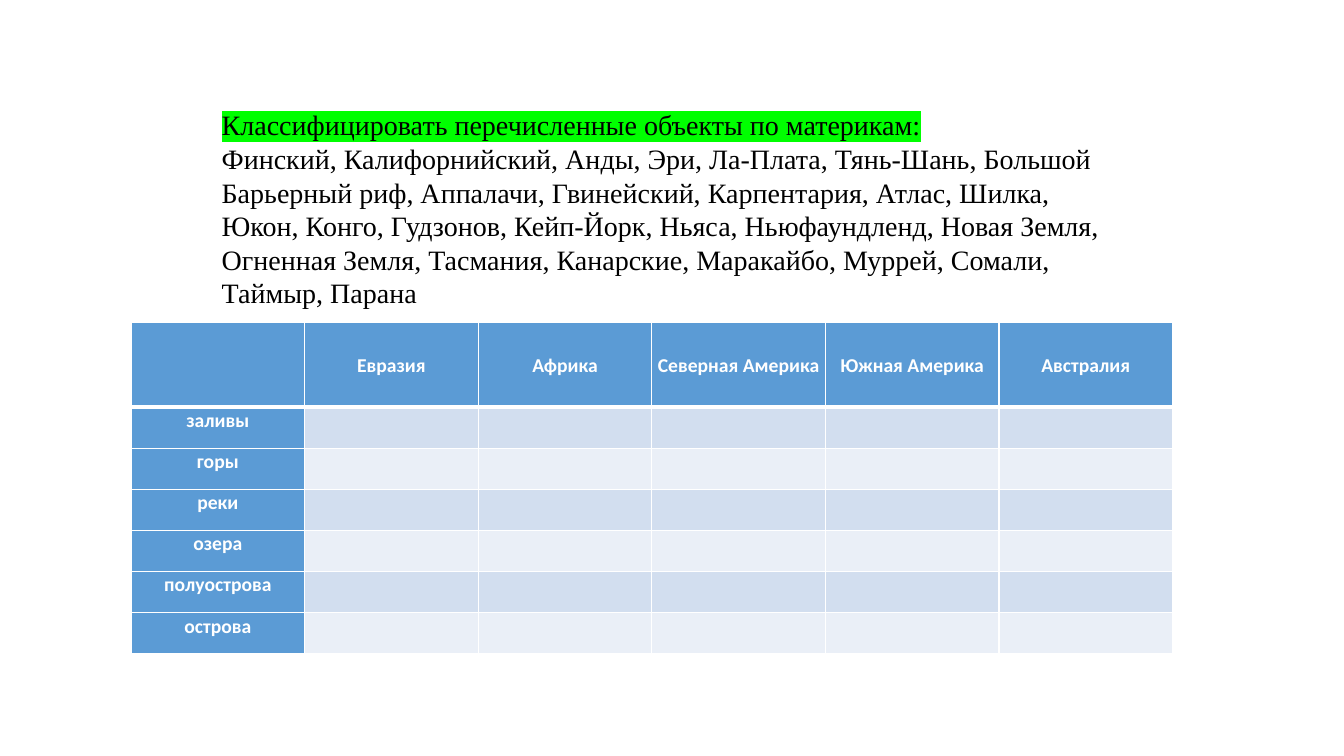
import pptx
import pptx.dml.color
import pptx.enum.text
import pptx.util
from lxml import etree
from pptx.oxml import ns

RGBColor = pptx.dml.color.RGBColor
ANCHOR = pptx.enum.text.MSO_ANCHOR

WHITE = RGBColor(0xFF, 0xFF, 0xFF)
BLACK = RGBColor(0x00, 0x00, 0x00)
GREEN = RGBColor(0x00, 0xFF, 0x00)
HEADING_BLUE = RGBColor(0x5B, 0x9B, 0xD5)
BANDS = (RGBColor(0xD2, 0xDE, 0xEF), RGBColor(0xEA, 0xEF, 0xF7))

TASK = "Классифицировать перечисленные объекты по материкам:"
PLACES = (
    "Финский, Калифорнийский, Анды, Эри, Ла-Плата, Тянь-Шань, Большой "
    "Барьерный риф, Аппалачи, Гвинейский, Карпентария, Атлас, Шилка, "
    "Юкон, Конго, Гудзонов, Кейп-Йорк, Ньяса, Ньюфаундленд, Новая Земля, "
    "Огненная Земля, Тасмания, Канарские, Маракайбо, Муррей, Сомали, "
    "Таймыр, Парана"
)
CONTINENTS = ["Евразия", "Африка", "Северная Америка", "Южная Америка", "Австралия"]
OBJECT_KINDS = ["заливы", "горы", "реки", "озера", "полуострова", "острова"]


def add_color(parent, tag, color):
    holder = etree.SubElement(parent, ns.qn(tag))
    etree.SubElement(holder, ns.qn("a:srgbClr"), val=str(color))


class TaskSlide:
    """Style and current slide; lengths are in grid steps of a tenth of an inch."""

    STEP = pptx.util.Inches(0.1)

    def __init__(self, presentation):
        self.slide = presentation.slides.add_slide(presentation.slide_layouts[6])

    def grid(self, *steps):
        return [round(step * self.STEP) for step in steps]

    def style(self, paragraph, font_name, size, color, bold=False):
        paragraph.font.name = font_name
        paragraph.font.size = pptx.util.Pt(size)
        paragraph.font.bold = bold
        paragraph.font.color.rgb = color

    def text(self, place, lines):
        """Lines are pairs of wording and highlight colour."""
        frame = self.slide.shapes.add_textbox(*self.grid(*place)).text_frame
        frame.word_wrap = True
        frame.auto_size = pptx.enum.text.MSO_AUTO_SIZE.SHAPE_TO_FIT_TEXT
        frame.vertical_anchor = ANCHOR.MIDDLE
        for index, (wording, highlight) in enumerate(lines):
            paragraph = frame.add_paragraph() if index else frame.paragraphs[0]
            run = paragraph.add_run()
            run.text = wording
            self.style(paragraph, "Times New Roman", 20, BLACK)
            if highlight is not None:
                add_color(run._r.get_or_add_rPr(), "a:highlight", highlight)

    def borders(self, cell, **widths):
        properties = cell._tc.get_or_add_tcPr()
        for side in "LRTB":
            width = pptx.util.Pt(widths.get(side, 1))
            line = etree.SubElement(properties, ns.qn(f"a:ln{side}"), w=str(width))
            add_color(line, "a:solidFill", WHITE)

    def cell(self, cell, wording, fill, is_header, below_header):
        cell.margin_left = cell.margin_right = 0
        cell.margin_top = cell.margin_bottom = 0
        cell.vertical_anchor = ANCHOR.MIDDLE if is_header else ANCHOR.TOP
        self.borders(cell, B=3 if is_header else 1, T=3 if below_header else 1)
        cell.fill.solid()
        cell.fill.fore_color.rgb = fill
        cell.text = wording
        paragraph = cell.text_frame.paragraphs[0]
        paragraph.alignment = pptx.enum.text.PP_ALIGN.CENTER
        paragraph.line_spacing = 1.07
        paragraph.space_after = pptx.util.Pt(8)
        self.style(paragraph, "Calibri", 14, WHITE, bold=True)

    def table(self, left, top, column, header, row, column_heads, row_heads):
        columns, rows = len(column_heads) + 1, len(row_heads) + 1
        place = self.grid(left, top, column * columns, header + row * len(row_heads))
        table = self.slide.shapes.add_table(rows, columns, *place).table
        table.first_col = True
        for grid_column in table.columns:
            grid_column.width, = self.grid(column)
        for r, grid_row in enumerate(table.rows):
            grid_row.height, = self.grid(row if r else header)
            for c, cell in enumerate(grid_row.cells):
                if r == 0:
                    wording = column_heads[c - 1] if c else ""
                else:
                    wording = "" if c else row_heads[r - 1]
                fill = BANDS[(r - 1) % 2] if r and c else HEADING_BLUE
                self.cell(cell, wording, fill, r == 0, r == 1)


def main():
    presentation = pptx.Presentation()
    presentation.slide_width = pptx.util.Inches(13.33)
    presentation.slide_height = pptx.util.Inches(7.5)
    page = TaskSlide(presentation)

    # Classification table
    page.table(13, 32, column=17.22, header=8.4, row=4.08,
               column_heads=CONTINENTS, row_heads=OBJECT_KINDS)

    # Task and the places to classify
    page.text((21, 10.1, 89.8, 21.2), [(TASK, GREEN), (PLACES, None)])

    presentation.save("out.pptx")


if __name__ == "__main__":
    main()
